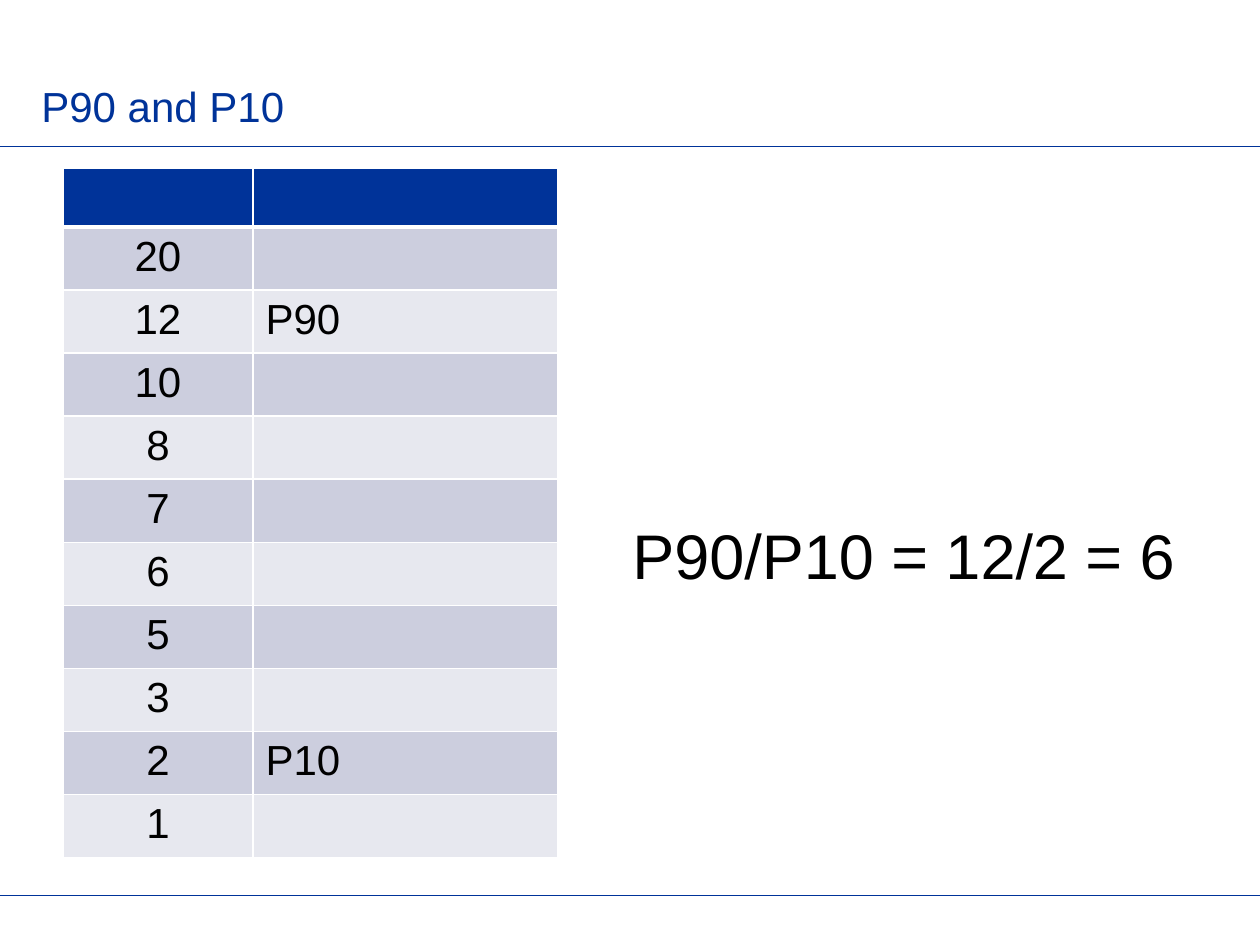
import pptx
import pptx.dml.color
import pptx.enum.shapes
import pptx.enum.text
import pptx.oxml
import pptx.oxml.ns
import pptx.util

EMU_PER_PX = 914400 / 126
NAVY, BLACK, WHITE = "003399", "000000", "FFFFFF"
BANDS = ("CCCEDE", "E7E8EF")
VALUES = (20, 12, 10, 8, 7, 6, 5, 3, 2, 1)
PERCENTILES = {12: "P90", 2: "P10"}


def px(length):
    return pptx.util.Emu(round(length * EMU_PER_PX))


def color(hex_string):
    return pptx.dml.color.RGBColor.from_string(hex_string)


def write(text_frame, text, size, hex_string, alignment=pptx.enum.text.PP_ALIGN.LEFT):
    paragraph = text_frame.paragraphs[0]
    paragraph.text = text
    paragraph.alignment = alignment
    paragraph.font.name = "Arial"
    paragraph.font.size = pptx.util.Pt(size)
    paragraph.font.color.rgb = color(hex_string)


def add_text(slide, box, text, size, hex_string, anchor):
    shape = slide.shapes.add_textbox(*map(px, box))
    shape.text_frame.word_wrap = True
    shape.text_frame.vertical_anchor = anchor
    write(shape.text_frame, text, size, hex_string)


def add_rule(slide, left, top, width):
    connector = slide.shapes.add_connector(
        pptx.enum.shapes.MSO_CONNECTOR.STRAIGHT,
        px(left), px(top), px(left + width), px(top))
    connector.line.color.rgb = color(NAVY)
    connector.line.width = pptx.util.Pt(0.5)
    properties = connector._element.spPr
    properties.append(pptx.oxml.parse_xml(
        f"<a:effectLst {pptx.oxml.ns.nsdecls('a')}/>"))


def style_cell(cell, fill, top_width, bottom_width):
    properties = cell._tc.get_or_add_tcPr()
    widths = {"lnL": 1, "lnR": 1, "lnT": top_width, "lnB": bottom_width}
    for tag, width in widths.items():
        properties.append(pptx.oxml.parse_xml(
            f"<a:{tag} {pptx.oxml.ns.nsdecls('a')} w='{pptx.util.Pt(width)}'>"
            f"<a:solidFill><a:srgbClr val='{WHITE}'/></a:solidFill></a:{tag}>"))
    cell.fill.solid()
    cell.fill.fore_color.rgb = color(fill)


def add_percentile_table(slide, left, top, column_widths, row_height):
    row_count = len(VALUES) + 1
    table = slide.shapes.add_table(
        row_count, len(column_widths), px(left), px(top),
        px(sum(column_widths)), px(row_height * row_count)).table
    for column, width in zip(table.columns, column_widths):
        column.width = px(width)
    for index, row in enumerate(table.rows):
        fill = BANDS[(index - 1) % 2] if index else NAVY
        for cell in row.cells:
            style_cell(cell, fill, 3 if index == 1 else 1, 1 if index else 3)
    for index, value in enumerate(VALUES, start=1):
        write(table.cell(index, 0).text_frame, str(value), 24, BLACK,
              pptx.enum.text.PP_ALIGN.CENTER)
        if value in PERCENTILES:
            write(table.cell(index, 1).text_frame, PERCENTILES[value], 24, BLACK)


def build_slide(presentation):
    slide = presentation.slides.add_slide(presentation.slide_layouts[6])
    for top in (146, 895):
        add_rule(slide, 0, top, 1260)
    add_text(slide, (29, 19, 1043, 118), "P90 and P10", 24, NAVY,
             pptx.enum.text.MSO_ANCHOR.BOTTOM)
    add_percentile_table(slide, 63, 168, (190, 305), 59)
    add_text(slide, (620, 510, 599, 89), "P90/P10 = 12/2 = 6", 36, BLACK,
             pptx.enum.text.MSO_ANCHOR.TOP)


def main():
    presentation = pptx.Presentation()
    presentation.slide_width = px(1260)
    presentation.slide_height = px(945)
    build_slide(presentation)
    presentation.save("out.pptx")


if __name__ == "__main__":
    main()
